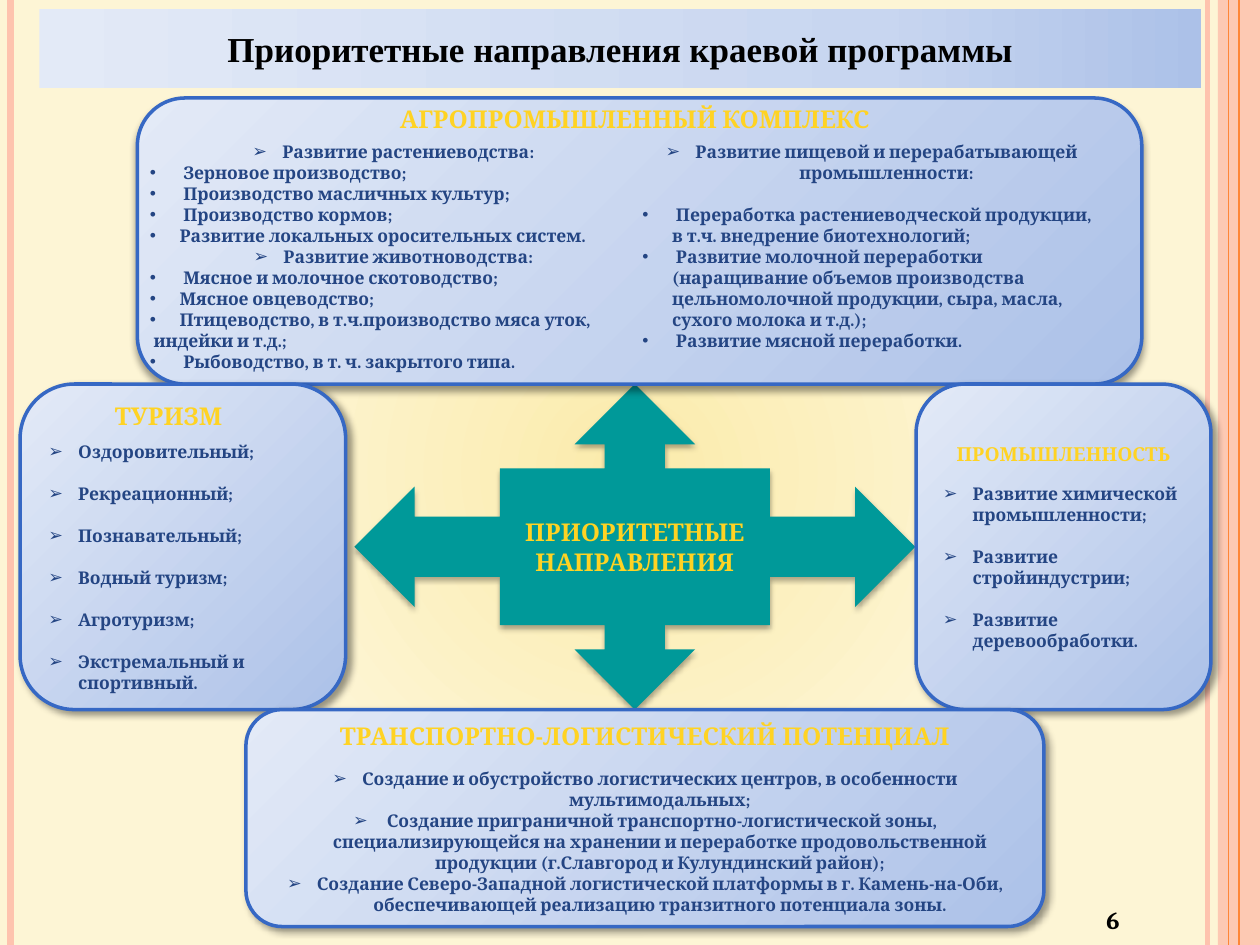
from collections import namedtuple

from lxml import etree
from pptx import Presentation
from pptx.dml.color import RGBColor
from pptx.enum.shapes import MSO_CONNECTOR, MSO_SHAPE
from pptx.enum.text import MSO_ANCHOR, MSO_AUTO_SIZE, PP_ALIGN
from pptx.oxml.ns import qn
from pptx.util import Pt

STRAIGHT = MSO_CONNECTOR.STRAIGHT
RECTANGLE, ROUNDED = MSO_SHAPE.RECTANGLE, MSO_SHAPE.ROUNDED_RECTANGLE
CALLOUT = MSO_SHAPE.QUAD_ARROW_CALLOUT
MIDDLE, TOP = MSO_ANCHOR.MIDDLE, MSO_ANCHOR.TOP
CENTER, LEFT = PP_ALIGN.CENTER, PP_ALIGN.LEFT

COLORS = {
    "cream": "FDF5D5", "sand": "FBEBAB", "peach": "FEC3AE", "orange": "FE8637",
    "teal": "009999", "gold": "FFD323", "navy": "244583", "black": "000000",
    "border": "3668C4", "pale": "E3EAF7", "soft": "C8D6F0", "blue": "ACC1E8",
}
WIDTH, HEIGHT = 720, 540
HANGING = 17
ARROW, DOT = "➢", "•"

Box = namedtuple("Box", "left top width height")
Line = namedtuple("Line", "text bullet align gap size color indent",
                  defaults=(ARROW, LEFT, 0, 10, "navy", 0))


def heading(text, size=14, align=CENTER, indent=0):
    return Line(text, None, align, 0, size, "gold", indent)


def rgb(name):
    return RGBColor.from_string(COLORS[name])


def points(box):
    return [Pt(value) for value in box]


def child(parent, tag, **attributes):
    return etree.SubElement(parent, qn(tag), {key: str(value) for key, value in attributes.items()})


def set_gradient(fill, element, stops, focus=None):
    fill.gradient()
    gradient = element.find(".//" + qn("a:gradFill"))
    for part in list(gradient):
        gradient.remove(part)
    stop_list = child(gradient, "a:gsLst")
    for position, name in stops:
        child(child(stop_list, "a:gs", pos=position * 1000), "a:srgbClr", val=COLORS[name])
    if focus is None:
        child(gradient, "a:lin", ang=0, scaled=0)
    else:
        shade = child(gradient, "a:path", path="circle")
        child(shade, "a:fillToRect", **{side: value * 1000 for side, value in zip("ltrb", focus)})


def set_shadow(shape, alpha, blur, distance, angle):
    shape.shadow.inherit = False
    effects = shape._element.spPr.find(qn("a:effectLst"))
    shadow = child(effects, "a:outerShdw", blurRad=Pt(blur), dist=Pt(distance),
                   dir=angle * 60000, algn="ctr", rotWithShape=0)
    child(child(shadow, "a:srgbClr", val=COLORS["black"]), "a:alpha", val=alpha * 1000)


def format_runs(paragraph, font_name, size, color):
    for run in paragraph.runs:
        run.font.name, run.font.size, run.font.bold = font_name, Pt(size), True
        run.font.color.rgb = rgb(color)


def write_lines(shape, lines, anchor=MIDDLE):
    frame = shape.text_frame
    frame.word_wrap, frame.vertical_anchor = True, anchor
    frame.text = "\n".join(line.text for line in lines)
    for paragraph, line in zip(frame.paragraphs, lines):
        paragraph.alignment, paragraph.space_before = line.align, Pt(line.gap)
        properties = paragraph._p.get_or_add_pPr()
        if line.bullet:
            properties.set("marL", str(Pt(HANGING)))
            properties.set("indent", str(-Pt(HANGING)))
            child(properties, "a:buFont", typeface="Arial")
            child(properties, "a:buChar", char=line.bullet)
        else:
            properties.set("marL", str(Pt(line.indent)))
        format_runs(paragraph, "Cambria", line.size, line.color)


def add_text(slide, box, lines, anchor=MIDDLE):
    write_lines(slide.shapes.add_textbox(*points(box)), lines, anchor)


def add_panel(slide, box, lines=(), shadow_angle=45):
    panel = slide.shapes.add_shape(ROUNDED, *points(box))
    set_gradient(panel.fill, panel._element, [(0, "blue"), (100, "pale")], (100, 100, 0, 0))
    panel.line.color.rgb, panel.line.width = rgb("border"), Pt(2)
    set_shadow(panel, 40, 4, 3, shadow_angle)
    if lines:
        write_lines(panel, lines)


def add_backdrop(slide, box):
    set_gradient(slide.background.fill, slide._element,
                 [(0, "sand"), (50, "cream"), (100, "cream")], (50, 50, 50, 50))
    right = box.left + box.width
    bottom = box.top + box.height
    band = slide.shapes.add_shape(RECTANGLE, *points((right - 24, box.top, 24, box.height)))
    band.shadow.inherit = False
    band.fill.solid()
    band.fill.fore_color.rgb = rgb("peach")
    child(band._element.spPr.find(".//" + qn("a:srgbClr")), "a:alpha", val=87000)
    band.line.fill.background()
    stripes = [(right - 30, "peach", 3), (box.left + 6, "peach", 4.5),
               (right - 12, "orange", 1.5), (right - 18, "orange", 0.75)]
    for x, color, width in stripes:
        stripe = slide.shapes.add_connector(STRAIGHT, *points((x, box.top, x, bottom)))
        stripe.line.color.rgb, stripe.line.width = rgb(color), Pt(width)
        child(stripe._element.spPr, "a:effectLst")


def add_title(slide, box):
    title = slide.shapes.title
    title.left, title.top, title.width, title.height = points(box)
    geometry = child(title._element.spPr, "a:prstGeom", prst="roundRect")
    child(child(geometry, "a:avLst"), "a:gd", name="adj", fmla="val 50000")
    set_gradient(title.fill, title._element, [(0, "pale"), (72, "soft"), (100, "blue")])
    frame = title.text_frame
    frame.text = "Приоритетные направления краевой программы"
    frame.auto_size, frame.vertical_anchor = MSO_AUTO_SIZE.NONE, MIDDLE
    frame.paragraphs[0].alignment = CENTER
    format_runs(frame.paragraphs[0], "Times New Roman", 20, "black")


def add_center(slide, box):
    callout = slide.shapes.add_shape(CALLOUT, *points(box))
    callout.fill.solid()
    callout.fill.fore_color.rgb = rgb("teal")
    callout.line.fill.background()
    set_shadow(callout, 32, 3.5, 2.2, 90)
    write_lines(callout, [heading("ПРИОРИТЕТНЫЕ НАПРАВЛЕНИЯ")])


def add_agriculture(slide, box):
    add_panel(slide, box, shadow_angle=90)
    bottom = box.top + box.height
    add_text(slide, Box(box.left, bottom - 146, 292.5, 146), [
        Line("Развитие растениеводства:", align=CENTER),
        Line(" Зерновое производство;", DOT),
        Line(" Производство масличных культур;", DOT),
        Line(" Производство кормов;", DOT),
        Line("Развитие локальных оросительных систем.", DOT),
        Line("Развитие животноводства:", align=CENTER),
        Line(" Мясное и молочное скотоводство;", DOT),
        Line("Мясное овцеводство;", DOT),
        Line("Птицеводство, в т.ч.производство мяса уток,", DOT),
        Line(" индейки и т.д.;", None),
        Line(" Рыбоводство, в т. ч. закрытого типа.", DOT)])
    add_text(slide, Box(box.left + 281.5, bottom - 157.5, 276, 157.5), [
        Line("Развитие пищевой и перерабатывающей промышленности:", align=CENTER),
        Line(" Переработка растениеводческой продукции, в т.ч. внедрение биотехнологий;", DOT, gap=12),
        Line(" Развитие молочной переработки (наращивание объемов производства "
             "цельномолочной продукции, сыра, масла, сухого молока и т.д.);", DOT),
        Line(" Развитие мясной переработки.", DOT)])
    add_text(slide, Box(box.left + 124, box.top, 320.5, 24.5),
             [heading("АГРОПРОМЫШЛЕННЫЙ КОМПЛЕКС")], TOP)


def add_tourism(slide, box):
    items = ["Оздоровительный;", "Рекреационный;", "Познавательный;", "Водный туризм;",
             "Агротуризм;", "Экстремальный и спортивный."]
    lines = [Line(text, gap=12 if index else 6) for index, text in enumerate(items)]
    add_panel(slide, box, [heading("ТУРИЗМ", align=LEFT, indent=38), *lines])


def add_industry(slide, box):
    items = ["Развитие химической промышленности;", "Развитие стройиндустрии;",
             "Развитие деревообработки."]
    lines = [Line(text, gap=12 if index else 10) for index, text in enumerate(items)]
    add_panel(slide, box, [heading("ПРОМЫШЛЕННОСТЬ", 11), *lines])


def add_transport(slide, box):
    add_panel(slide, box, [
        heading("ТРАНСПОРТНО-ЛОГИСТИЧЕСКИЙ ПОТЕНЦИАЛ"),
        Line("Создание и обустройство логистических центров, в особенности мультимодальных;",
             align=CENTER, gap=10),
        Line(" Создание приграничной транспортно-логистической зоны, специализирующейся на хранении "
             "и переработке продовольственной продукции (г.Славгород и Кулундинский район);", align=CENTER),
        Line("Создание Северо-Западной логистической платформы в г. Камень-на-Оби, "
             "обеспечивающей реализацию транзитного потенциала зоны.", align=CENTER)])


def main():
    presentation = Presentation()
    presentation.slide_width, presentation.slide_height = Pt(WIDTH), Pt(HEIGHT)
    slide = presentation.slides.add_slide(presentation.slide_layouts[5])
    add_backdrop(slide, Box(0, 0, WIDTH, HEIGHT))
    add_title(slide, Box(22.5, 5, 664, 45.5))
    add_text(slide, Box(552, 511, 168, 29), [Line("6", None, CENTER, 0, 14, "black")])
    add_center(slide, Box(202.5, 219.5, 320.5, 186))
    add_agriculture(slide, Box(78.5, 56, 574, 163.5))
    add_industry(slide, Box(523.5, 219.5, 168.5, 186))
    add_tourism(slide, Box(11.5, 219.5, 186, 186))
    add_transport(slide, Box(140.5, 405.5, 456, 124))
    presentation.save("out.pptx")


if __name__ == "__main__":
    main()
